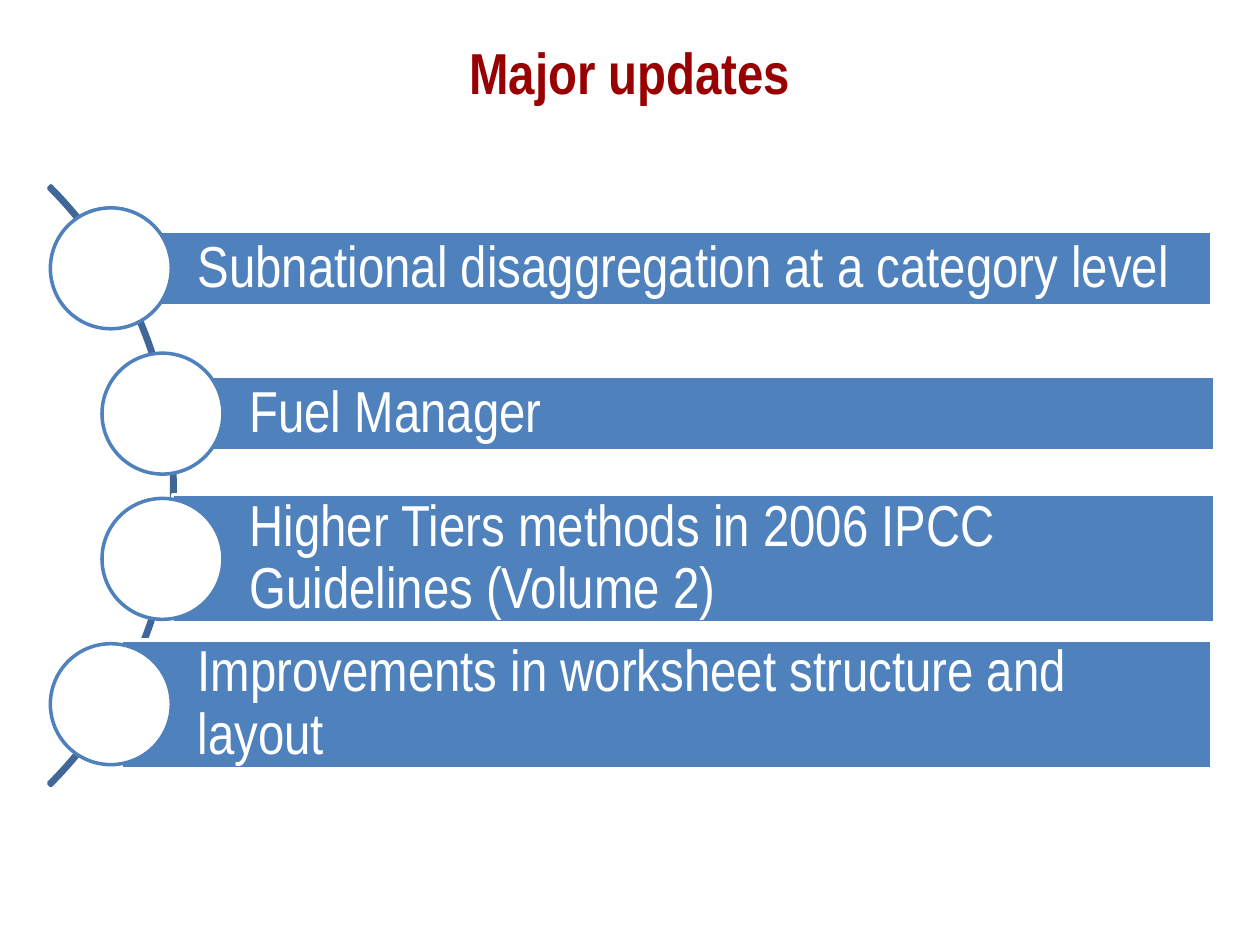
from dataclasses import dataclass

import pptx
import pptx.dml.color
import pptx.enum.shapes
import pptx.enum.text
import pptx.util

Inches = pptx.util.Inches
Pt = pptx.util.Pt
SHAPE = pptx.enum.shapes.MSO_SHAPE
ALIGN = pptx.enum.text.PP_ALIGN
MIDDLE = pptx.enum.text.MSO_ANCHOR.MIDDLE

FONT = "Arial Narrow"
WHITE, BLUE, ARC_BLUE, RED = "FFFFFF", "4F81BD", "3F6797", "990002"
DIAMETER = 0.96
FIRST_CENTER, STEP = 2.13, 1.153


@dataclass
class Update:
    text: str
    left: float
    right: float
    height: float


UPDATES = [
    Update("Subnational disaggregation at a category level", 0.96, 9.62, 0.59),
    Update("Fuel Manager", 1.37, 9.64, 0.59),
    Update("Higher Tiers methods in 2006 IPCC Guidelines (Volume 2)", 1.37, 9.64, 1.02),
    Update("Improvements in worksheet structure and layout", 0.96, 9.62, 1.02),
]


def color(value: str) -> pptx.dml.color.RGBColor:
    return pptx.dml.color.RGBColor.from_string(value)


def add_shape(s, kind, left: float, top: float, width: float, height: float,
              fill: str | None, line: str):
    sp = s.shapes.add_shape(kind, Inches(left), Inches(top), Inches(width), Inches(height))
    sp.shadow.inherit = False
    if fill:
        sp.fill.solid()
        sp.fill.fore_color.rgb = color(fill)
    else:
        sp.fill.background()
    sp.line.color.rgb = color(line)
    sp.line.width = Pt(2)
    return sp


def format_text(p, text: str, font_color: str, align, bold: bool = False) -> None:
    p.text = text
    p.alignment = align
    p.font.name = FONT
    p.font.size = Pt(33)
    p.font.bold = bold
    p.font.color.rgb = color(font_color)


def add_update(s, update: Update, center: float) -> None:
    bar = add_shape(s, SHAPE.RECTANGLE, update.left, center - update.height / 2,
                    update.right - update.left, update.height, BLUE, WHITE)
    tf = bar.text_frame
    tf.word_wrap = True
    tf.vertical_anchor = MIDDLE
    tf.margin_left = Inches(0.61)
    tf.margin_right = tf.margin_top = tf.margin_bottom = Inches(0.09)
    p = tf.paragraphs[0]
    p.line_spacing = 0.9
    format_text(p, update.text, WHITE, ALIGN.LEFT)

    # The marker is centred just left of the bar's left edge
    add_shape(s, SHAPE.OVAL, update.left - 0.08 - DIAMETER / 2, center - DIAMETER / 2,
              DIAMETER, DIAMETER, WHITE, BLUE)


def main() -> None:
    prs = pptx.Presentation()
    prs.slide_width, prs.slide_height = Inches(10), Inches(7.5)
    s = prs.slides.add_slide(prs.slide_layouts[5])

    # Title
    title = s.shapes.title
    title.left, title.top = Inches(0), Inches(0.26)
    title.width, title.height = Inches(10), Inches(0.61)
    title.text_frame.vertical_anchor = MIDDLE
    format_text(title.text_frame.paragraphs[0], "Major updates", RED, ALIGN.CENTER, bold=True)

    # Arc behind the markers, from 315 to 45 degrees
    arc = add_shape(s, SHAPE.BLOCK_ARC, -5.34, 0.49, 6.73, 6.73, None, ARC_BLUE)
    for i, value in enumerate((189, 27, 0.004)):
        arc.adjustments[i] = value

    # Bars with round markers
    for i, update in enumerate(UPDATES):
        # Two-line bars sit slightly lower than their even step
        add_update(s, update, FIRST_CENTER + i * STEP)

    prs.save("out.pptx")


if __name__ == "__main__":
    main()
